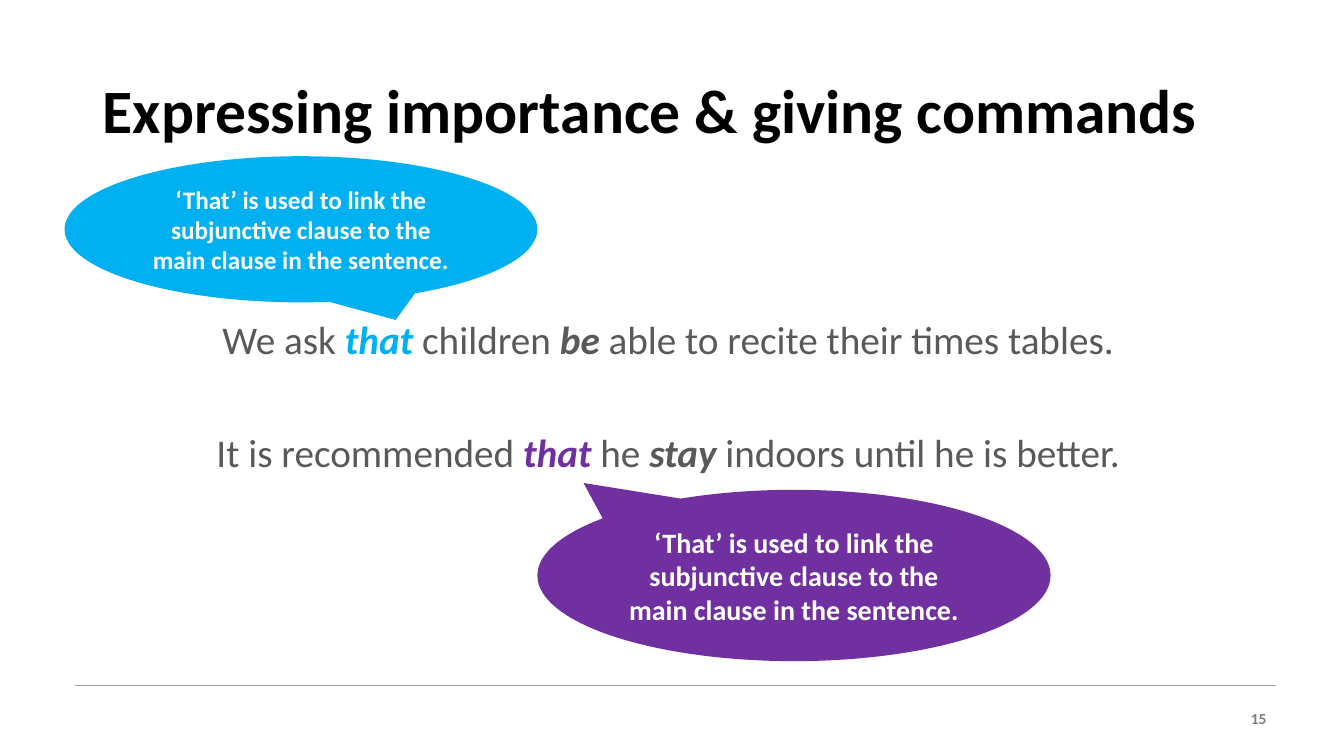
from lxml.etree import SubElement
from pptx import Presentation
from pptx.dml.color import RGBColor
from pptx.enum.shapes import MSO_CONNECTOR, MSO_SHAPE
from pptx.enum.text import MSO_ANCHOR, MSO_AUTO_SIZE, PP_ALIGN
from pptx.oxml.ns import qn
from pptx.util import Inches, Pt

BLACK = RGBColor(0x00, 0x00, 0x00)
WHITE = RGBColor(0xFF, 0xFF, 0xFF)
DARK = RGBColor(0x59, 0x59, 0x59)
GREY = RGBColor(0x7F, 0x7F, 0x7F)
RULE = RGBColor(0xA5, 0xA5, 0xA5)
BLUE = RGBColor(0x00, 0xB0, 0xF0)
PURPLE = RGBColor(0x70, 0x30, 0xA0)

HINT = "‘That’ is used to link the subjunctive clause to the main clause in the sentence."


class Page:
    font = "Calibri"

    def __init__(self, deck):
        self.slide = deck.slides.add_slide(deck.slide_layouts[5])
        self.shapes = self.slide.shapes

    def run(self, para, text, size, color, bold=False, slant=False):
        run = para.add_run()
        run.text = text
        font = run.font
        font.name, font.size = self.font, Pt(size)
        font.bold, font.italic = bold, slant
        font.color.rgb = color

    def title(self, text, *box):
        shape = self.shapes.title
        shape.left, shape.top, shape.width, shape.height = map(Inches, box)
        frame = shape.text_frame
        frame.auto_size = MSO_AUTO_SIZE.NONE
        frame.vertical_anchor = MSO_ANCHOR.MIDDLE
        para = frame.paragraphs[0]
        para.alignment = PP_ALIGN.LEFT
        para.line_spacing = 0.9
        self.run(para, text, 44, BLACK, bold=True)

    def text(self, lines, size, align, *box, line=1.0, gap=0):
        """Each line is a list of (text, color, bold, slant) runs."""
        frame = self.shapes.add_textbox(*map(Inches, box)).text_frame
        frame.word_wrap = True
        for i, parts in enumerate(lines):
            para = frame.add_paragraph() if i else frame.paragraphs[0]
            para.alignment = align
            para.line_spacing = line
            if i:
                para.space_before = Pt(gap)
            for words, color, bold, slant in parts:
                self.run(para, words, size, color, bold, slant)

    def bubble(self, text, size, fill, tip, *box):
        shape = self.shapes.add_shape(MSO_SHAPE.OVAL_CALLOUT, *map(Inches, box))
        shape.adjustments[0], shape.adjustments[1] = tip
        shape.shadow.inherit = False
        shape.fill.solid()
        shape.fill.fore_color.rgb = fill
        shape.line.fill.background()
        frame = shape.text_frame
        frame.word_wrap = True
        frame.vertical_anchor = MSO_ANCHOR.MIDDLE
        para = frame.paragraphs[0]
        para.alignment = PP_ALIGN.CENTER
        self.run(para, text, size, WHITE, bold=True)

    def rule(self, left, right, y):
        line = self.shapes.add_connector(
            MSO_CONNECTOR.STRAIGHT, Inches(left), Inches(y), Inches(right), Inches(y))
        line.line.color.rgb = RULE
        line.line.width = Pt(0.75)
        SubElement(line._element.spPr, qn("a:effectLst"))


def plain(text):
    return text, DARK, False, False


def strong(text, color=DARK):
    return text, color, True, True


def main():
    deck = Presentation()
    deck.slide_width, deck.slide_height = Inches(13.33), Inches(7.5)
    page = Page(deck)

    # Footer rule and page number
    page.rule(0.74, 12.66, 6.8)
    page.text([[("15", GREY, True, False)]], 11, PP_ALIGN.RIGHT, 12.28, 6.99, 0.38, 0.29)

    # Title
    page.title("Expressing importance & giving commands", 0.92, 0.4, 11.5, 1.45)

    # Example sentences
    page.text([
        [plain("We ask "), strong("that ", BLUE), plain("children "), strong("be "),
         plain("able to recite their times tables. ")],
        [plain("It is recommended "), strong("that", PURPLE), plain(" he "), strong("stay "),
         plain("indoors until he is better. ")],
    ], 28, PP_ALIGN.CENTER, 0.92, 3.13, 11.5, 1.65, line=0.9, gap=50.8)

    # Hints pointing at each "that"
    page.bubble(HINT, 18, BLUE, (0.2, 0.62), 0.64, 1.55, 4.69, 1.45)
    page.bubble(HINT, 20, PURPLE, (-0.41, -0.54), 5.33, 4.86, 5.09, 1.7)

    deck.save("out.pptx")


if __name__ == "__main__":
    main()
